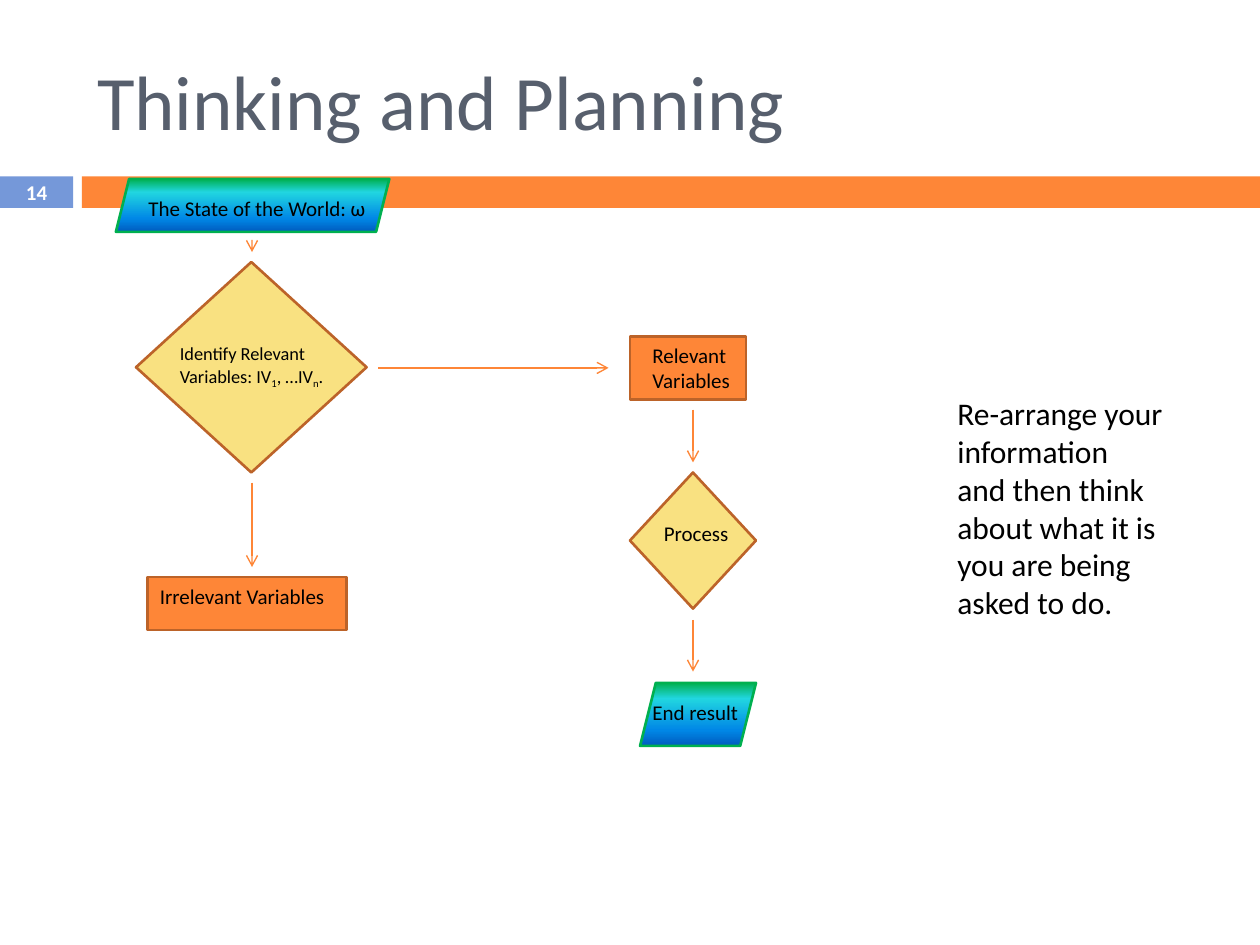
from dataclasses import dataclass

from lxml.etree import SubElement
from pptx import Presentation
from pptx.dml.color import RGBColor
from pptx.enum.shapes import MSO_CONNECTOR, MSO_SHAPE
from pptx.enum.text import MSO_ANCHOR, MSO_AUTO_SIZE, PP_ALIGN
from pptx.oxml.ns import qn
from pptx.util import Inches, Pt


@dataclass(frozen=True)
class Theme:
    font: str = "Calibri"
    title: str = "575F6D"
    text: str = "000000"
    light: str = "FFFFFF"
    blue: str = "7598D9"
    orange: str = "FE8637"
    brown: str = "BC6329"
    yellow: str = "F9E181"
    green: str = "00B050"
    gradient: tuple = ((0, "00B050"), (25, "21D6E0"), (75, "0087E6"), (100, "005CBF"))
    title_size: float = 44
    note_size: float = 18
    label_size: float = 12
    small_size: float = 10.5
    outline: float = 1.5
    arrow: float = 0.79


def rgb(color):
    return RGBColor.from_string(color)


class FlowSlide:
    def __init__(self, prs, theme):
        self.theme = theme
        self.slide = prs.slides.add_slide(prs.slide_layouts[5])

    def style(self, p, size, color, bold=False):
        for r in p.runs:
            r.font.name = self.theme.font
            r.font.size = Pt(size)
            r.font.bold = bold
            r.font.color.rgb = rgb(color)

    def title(self, text, box):
        sp = self.slide.shapes.title
        sp.left, sp.top, sp.width, sp.height = map(Inches, box)
        tf = sp.text_frame
        tf.text = text
        tf.auto_size = MSO_AUTO_SIZE.NONE
        tf.vertical_anchor = MSO_ANCHOR.MIDDLE
        p = tf.paragraphs[0]
        p.alignment = PP_ALIGN.LEFT
        self.style(p, self.theme.title_size, self.theme.title)

    def shape(self, kind, box, fill, line=None):
        sp = self.slide.shapes.add_shape(kind, *map(Inches, box))
        sp.shadow.inherit = False
        if isinstance(fill, tuple):
            self.gradient(sp, fill)
        else:
            sp.fill.solid()
            sp.fill.fore_color.rgb = rgb(fill)
        if line:
            sp.line.color.rgb = rgb(line)
            sp.line.width = Pt(self.theme.outline)
        else:
            sp.line.fill.background()

    def gradient(self, sp, stops):
        """Fill a shape from top to bottom with (percent, colour) stops."""
        sp.fill.gradient()
        sp.fill.gradient_angle = 270
        gs_list = sp._element.spPr.find(qn("a:gradFill")).find(qn("a:gsLst"))
        for gs in list(gs_list):
            gs_list.remove(gs)
        for percent, color in stops:
            gs = SubElement(gs_list, qn("a:gs"), pos=str(percent * 1000))
            SubElement(gs, qn("a:srgbClr"), val=color)

    def data(self, box):
        self.shape(MSO_SHAPE.PARALLELOGRAM, box, self.theme.gradient, self.theme.green)

    def decision(self, box):
        self.shape(MSO_SHAPE.DIAMOND, box, self.theme.yellow, self.theme.brown)

    def step(self, box):
        self.shape(MSO_SHAPE.RECTANGLE, box, self.theme.orange, self.theme.brown)

    def text(self, lines, box, size=None, color=None, wrap=True, bold=False, centered=False):
        """Each line is a string, in which "_" lowers the single character after it."""
        tf = self.slide.shapes.add_textbox(*map(Inches, box)).text_frame
        tf.word_wrap = wrap
        if centered:
            tf.vertical_anchor = MSO_ANCHOR.MIDDLE
        for i, line in enumerate(lines):
            p = tf.add_paragraph() if i else tf.paragraphs[0]
            if centered:
                p.alignment = PP_ALIGN.CENTER
            first, *lowered = line.split("_")
            p.add_run().text = first
            for part in lowered:
                r = p.add_run()
                r.text = part[0]
                r._r.get_or_add_rPr().set("baseline", "-25000")
                p.add_run().text = part[1:]
            self.style(p, size or self.theme.label_size, color or self.theme.text, bold)

    def arrow(self, start, end):
        cx = self.slide.shapes.add_connector(
            MSO_CONNECTOR.STRAIGHT, *map(Inches, (*start, *end)))
        cx.line.color.rgb = rgb(self.theme.orange)
        cx.line.width = Pt(self.theme.arrow)
        SubElement(cx.line._get_or_add_ln(), qn("a:tailEnd"), type="arrow")
        SubElement(cx._element.spPr, qn("a:effectLst"))


def main():
    prs = Presentation()
    prs.slide_width, prs.slide_height = Inches(10), Inches(7.5)
    theme = Theme()
    s = FlowSlide(prs, theme)

    s.title("Thinking and Planning", (0.67, 0.25, 8.92, 1.08))
    s.shape(MSO_SHAPE.RECTANGLE, (0, 1.4, 0.58, 0.25), theme.blue)
    s.shape(MSO_SHAPE.RECTANGLE, (0.65, 1.4, 9.35, 0.25), theme.orange)
    s.text(["14"], (0, 1.39, 0.58, 0.27), color=theme.light, bold=True, centered=True)

    s.data((0.92, 1.42, 2.17, 0.42))
    s.text(["The State of the World: ω"], (1.08, 1.5, 2.17, 0.3))
    s.decision((1.08, 2.08, 1.83, 1.67))
    s.text(["Identify Relevant", "Variables: IV_1, …IV_n."], (1.33, 2.67, 1.37, 0.45),
           size=theme.small_size, wrap=False)
    s.step((1.17, 4.58, 1.58, 0.42))
    s.text(["Irrelevant Variables"], (1.17, 4.58, 1.52, 0.3), wrap=False)

    s.step((5, 2.67, 0.92, 0.5))
    s.text(["Relevant Variables"], (5.08, 2.67, 1.25, 0.5))
    s.decision((5, 3.75, 1, 1.08))
    s.text(["Process"], (5.17, 4.08, 0.72, 0.3), wrap=False)
    s.data((5.08, 5.42, 0.92, 0.5))
    s.text(["End result"], (5.08, 5.5, 0.89, 0.3), wrap=False)

    left_x, right_x, branch_y = 2, 5.5, 2.92
    for x, top, bottom in ((left_x, 1.92, 2), (left_x, 3.83, 4.5),
                           (right_x, 3.25, 3.67), (right_x, 4.92, 5.33)):
        s.arrow((x, top), (x, bottom))
    s.arrow((3, branch_y), (4.83, branch_y))

    s.text(["Re-arrange your information and then think about what it is "
            "you are being asked to do."], (7.5, 3.08, 1.83, 2.52), size=theme.note_size)

    prs.save("out.pptx")


if __name__ == "__main__":
    main()
